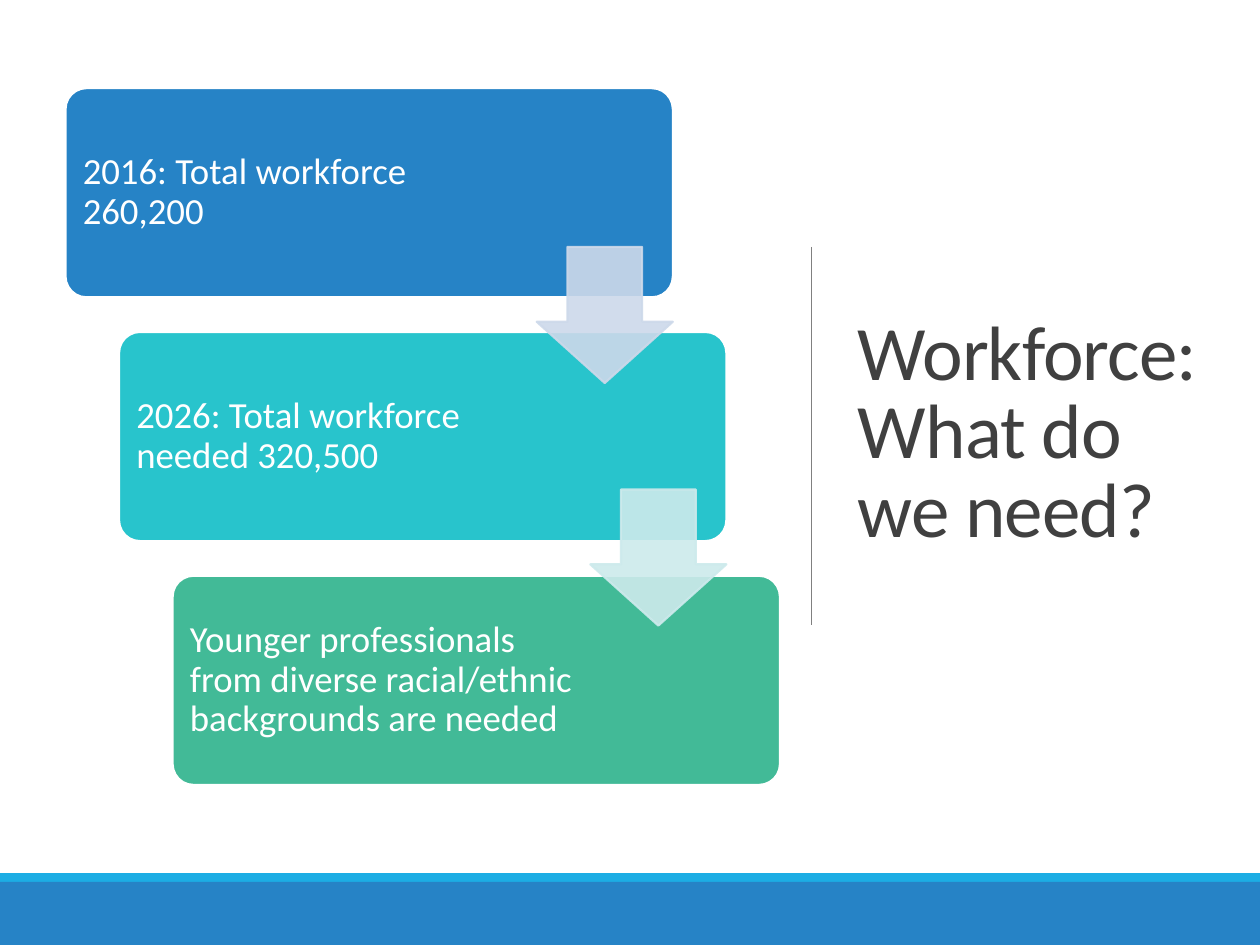
from lxml.etree import SubElement
from pptx import Presentation
from pptx.dml.color import RGBColor
from pptx.enum.shapes import MSO_CONNECTOR as Connector, MSO_SHAPE as Shape
from pptx.enum.text import MSO_ANCHOR as Anchor, PP_ALIGN as Align
from pptx.oxml.ns import qn
from pptx.util import Inches, Pt

HEADING = "Workforce: What do we need?"
STEPS = [
    ("2016: Total workforce 260,200", "2683C6", 3.03),
    ("2026: Total workforce needed 320,500", "28C4CC", 3.22),
    ("Younger professionals from diverse racial/ethnic backgrounds are needed", "42BA97", 3.22),
]
ARROW_COLORS = ["CDD9EA", "CDEAEC"]

THEME = {
    "font": "Calibri", "heading_size": 44, "step_size": 21,
    "heading": "404040", "light": "FFFFFF", "rule": "808080",
    "accent": "1CADE4", "footer": "2683C6", "outline": 1.25,
}
SLIDE_W, SLIDE_H = 10, 7.5
FOOTER_TOP, ACCENT_H = 7, 0.07
STEP_X, STEP_Y, STEP_W, STEP_H = 0.52, 0.7, 4.82, 1.66
SHIFT_X, SHIFT_Y = 0.425, 1.935
PAD, ARROW = 0.05, 1.08
RULE_X, RULE_TOP, RULE_BOTTOM = 6.44, 1.96, 4.96


def rgb(color):
    return RGBColor.from_string(color)


def set_alpha(fill_parent):
    color = fill_parent.find(qn("a:solidFill"))[0]
    SubElement(color, qn("a:alpha"), val="90000")


def add_block(slide, preset, box, color, outline=None, adjustments=()):
    block = slide.shapes.add_shape(preset, *map(Inches, box))
    block.shadow.inherit = False
    block.fill.solid()
    block.fill.fore_color.rgb = rgb(color)
    if outline:
        block.line.color.rgb = rgb(outline)
        block.line.width = Pt(THEME["outline"])
    else:
        block.line.fill.background()
    for index, value in enumerate(adjustments):
        block.adjustments[index] = value
    return block


def add_label(slide, box, text, size, color, spacing, inset=7.2):
    label = slide.shapes.add_textbox(*map(Inches, box))
    frame = label.text_frame
    frame.word_wrap = True
    frame.vertical_anchor = Anchor.MIDDLE
    frame.margin_left = frame.margin_right = Pt(inset)
    frame.margin_top = frame.margin_bottom = Pt(min(inset, 6.3))
    paragraph = frame.paragraphs[0]
    paragraph.alignment = Align.LEFT
    paragraph.line_spacing = spacing
    run = paragraph.add_run()
    run.text = text
    run.font.name = THEME["font"]
    run.font.size = Pt(size)
    run.font.color.rgb = rgb(color)
    return run


def add_heading(slide):
    run = add_label(slide, (6.71, 0.69, 2.91, 5.53), HEADING,
                    THEME["heading_size"], THEME["heading"], 0.85)
    run._r.get_or_add_rPr().set("spc", "-50")
    rule = slide.shapes.add_connector(
        Connector.STRAIGHT, *map(Inches, (RULE_X, RULE_TOP, RULE_X, RULE_BOTTOM)))
    rule.line.color.rgb = rgb(THEME["rule"])
    rule.line.width = Pt(0.5)
    SubElement(rule._element.spPr, qn("a:effectLst"))


def add_steps(slide):
    for index, (text, color, text_w) in enumerate(STEPS):
        x, y = STEP_X + index * SHIFT_X, STEP_Y + index * SHIFT_Y
        add_block(slide, Shape.ROUNDED_RECTANGLE, (x, y, STEP_W, STEP_H),
                  color, THEME["light"], [0.1])
        add_label(slide, (x + PAD, y + PAD, text_w, STEP_H - 2 * PAD), text,
                  THEME["step_size"], THEME["light"], 0.9, 6.3)


def add_arrows(slide):
    for index, color in enumerate(ARROW_COLORS):
        x = STEP_X + STEP_W - ARROW + index * SHIFT_X
        y = RULE_TOP + index * (SHIFT_Y - 0.01)
        arrow = add_block(slide, Shape.DOWN_ARROW, (x, y, ARROW, ARROW),
                          color, color, [0.55, 0.45])
        properties = arrow._element.spPr
        set_alpha(properties)
        set_alpha(properties.find(qn("a:ln")))


def main():
    deck = Presentation()
    deck.slide_width, deck.slide_height = Inches(SLIDE_W), Inches(SLIDE_H)
    slide = deck.slides.add_slide(deck.slide_layouts[6])
    accent_top = FOOTER_TOP - ACCENT_H
    add_block(slide, Shape.RECTANGLE, (0, 0, SLIDE_W, accent_top), THEME["light"])
    add_heading(slide)
    add_block(slide, Shape.RECTANGLE, (0, accent_top, SLIDE_W, ACCENT_H), THEME["accent"])
    add_block(slide, Shape.RECTANGLE,
              (0, FOOTER_TOP, SLIDE_W, SLIDE_H - FOOTER_TOP), THEME["footer"])
    add_steps(slide)
    add_arrows(slide)
    deck.save("out.pptx")


if __name__ == "__main__":
    main()
